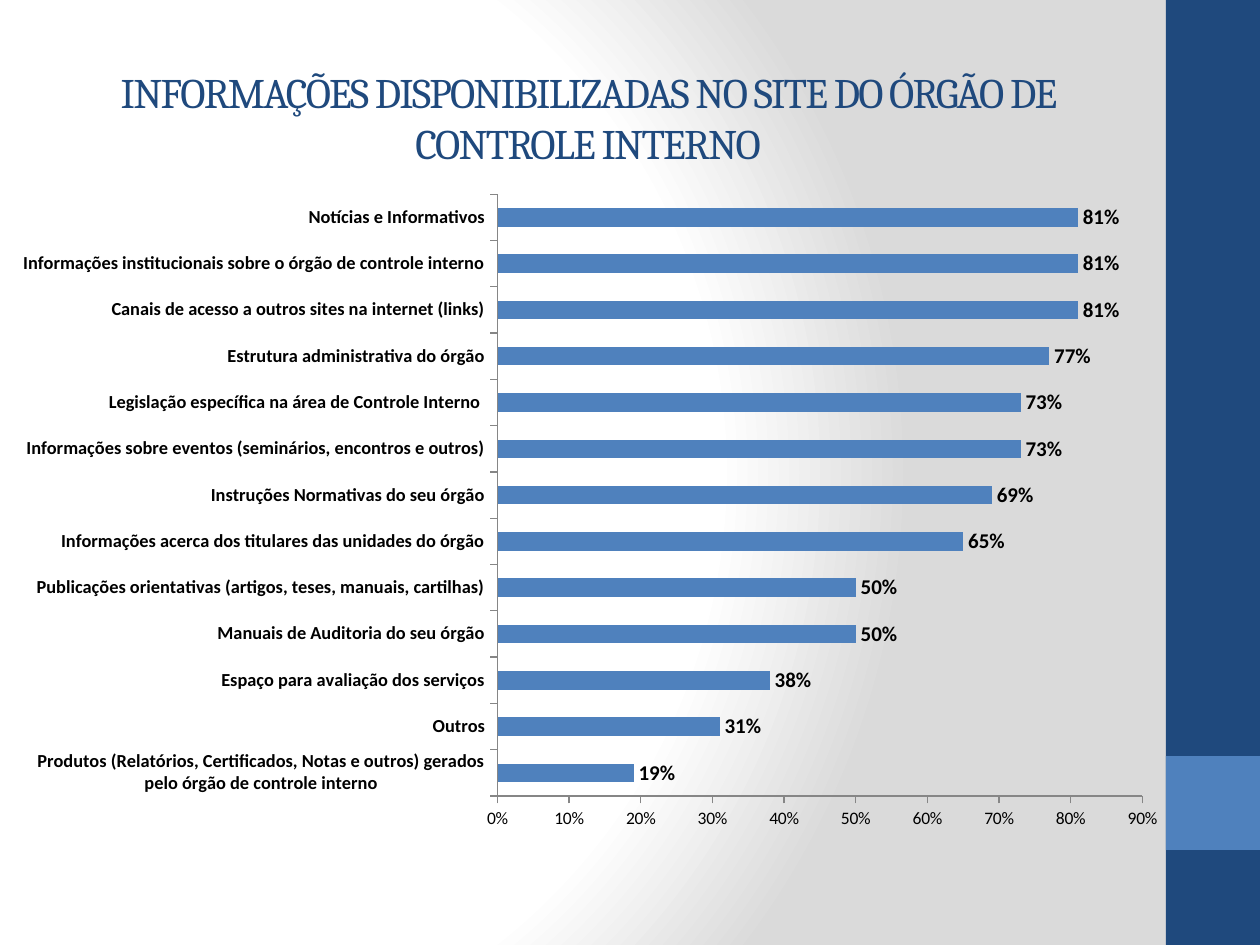
from lxml import etree
from pptx import Presentation
from pptx import util as u
from pptx.chart.data import CategoryChartData
from pptx.dml.color import RGBColor
from pptx.enum import chart as ch, shapes, text
from pptx.oxml import parse_xml
from pptx.oxml.ns import nsdecls, qn

PX = 914400 / 126
WIDTH, HEIGHT = 1260, 945
NAVY = RGBColor(0x1F, 0x49, 0x7D)
BLUE = RGBColor(0x4F, 0x81, 0xBD)
BLACK = RGBColor(0, 0, 0)
GREY = RGBColor(0x86, 0x86, 0x86)
WHITE = RGBColor(0xFF, 0xFF, 0xFF)
SILVER = RGBColor(0xDA, 0xDA, 0xDA)

TITLE = "INFORMAÇÕES DISPONIBILIZADAS NO SITE DO ÓRGÃO DE CONTROLE INTERNO"
# Listed from the bottom bar to the top one
SHARES = [
    ("Produtos (Relatórios, Certificados, Notas e outros) gerados pelo órgão de controle interno", 0.19),
    ("Outros", 0.31),
    ("Espaço para avaliação dos serviços", 0.38),
    ("Manuais de Auditoria do seu órgão", 0.5),
    ("Publicações orientativas (artigos, teses, manuais, cartilhas)", 0.5),
    ("Informações acerca dos titulares das unidades do órgão", 0.65),
    ("Instruções Normativas do seu órgão", 0.69),
    ("Informações sobre eventos (seminários, encontros e outros)", 0.73),
    ("Legislação específica na área de Controle Interno ", 0.73),
    ("Estrutura administrativa do órgão", 0.77),
    ("Canais de acesso a outros sites na internet (links)", 0.81),
    ("Informações institucionais sobre o órgão de controle interno", 0.81),
    ("Notícias e Informativos", 0.81),
]


def px(*lengths):
    return [u.Emu(round(length * PX)) for length in lengths]


class Deck:
    body_font = "Calibri"
    title_font = "Cambria"

    def __init__(self):
        self.prs = Presentation()
        self.prs.slide_width, self.prs.slide_height = px(WIDTH, HEIGHT)
        self.slide = self.prs.slides.add_slide(self.prs.slide_layouts[6])

    def background(self, stops, focus):
        """Radial gradient; focus holds the l, t, r, b insets in percent."""
        fill = self.slide.background.fill
        fill.solid()
        marks = "".join(
            f'<a:gs pos="{pos * 1000}"><a:srgbClr val="{color}"/></a:gs>' for pos, color in stops)
        insets = " ".join(f'{side}="{inset * 1000}"' for side, inset in zip("ltrb", focus))
        gradient = parse_xml(
            f'<a:gradFill {nsdecls("a")} rotWithShape="1"><a:gsLst>{marks}</a:gsLst>'
            f'<a:path path="circle"><a:fillToRect {insets}/></a:path></a:gradFill>')
        solid = self.slide.element.find(".//" + qn("p:bgPr")).find(qn("a:solidFill"))
        solid.getparent().replace(solid, gradient)

    def block(self, box, color):
        shape = self.slide.shapes.add_shape(shapes.MSO_SHAPE.RECTANGLE, *px(*box))
        shape.shadow.inherit = False
        shape.fill.solid()
        shape.fill.fore_color.rgb = color
        shape.line.fill.background()

    def title(self, box, words):
        frame = self.slide.shapes.add_textbox(*px(*box)).text_frame
        frame.word_wrap = True
        frame.vertical_anchor = text.MSO_ANCHOR.MIDDLE
        frame.text = words
        line = frame.paragraphs[0]
        line.alignment = text.PP_ALIGN.CENTER
        run = line.runs[0]
        self.style(run.font, 24, color=NAVY, name=self.title_font)
        run.font._element.set("spc", "-100")

    def style(self, font, size, bold=False, color=BLACK, name=body_font):
        font.size, font.bold, font.name = u.Pt(size), bold, name
        font.color.rgb = color

    def axis(self, axis, size, bold=False):
        axis.has_major_gridlines = False
        axis.major_tick_mark = ch.XL_TICK_MARK.OUTSIDE
        axis.minor_tick_mark = ch.XL_TICK_MARK.NONE
        axis.format.line.color.rgb = GREY
        self.style(axis.tick_labels.font, size, bold)

    def bar_chart(self, box, shares, plot_area):
        data = CategoryChartData(number_format="0%")
        data.categories = [label for label, _ in shares]
        data.add_series("Series 1", [share for _, share in shares])
        chart = self.slide.shapes.add_chart(
            ch.XL_CHART_TYPE.BAR_CLUSTERED, *px(*box), data).chart
        chart.has_legend = chart.has_title = False
        self.style(chart.font, 10)

        self.axis(chart.category_axis, 10.5, bold=True)
        percent = chart.value_axis
        self.axis(percent, 10)
        percent.minimum_scale, percent.maximum_scale, percent.major_unit = 0, 0.9, 0.1
        percent.tick_labels.number_format = "0%"
        percent.tick_labels.number_format_is_linked = False

        bars = chart.plots[0]
        bars.gap_width = 150
        bars.vary_by_categories = False
        bars.series[0].format.fill.solid()
        bars.series[0].format.fill.fore_color.rgb = BLUE
        bars.has_data_labels = True
        labels = bars.data_labels
        labels.show_value = True
        labels.number_format = "0%"
        labels.number_format_is_linked = False
        labels.position = ch.XL_LABEL_POSITION.OUTSIDE_END
        self.style(labels.font, 12, bold=True)
        self.place_plot(chart, plot_area)

    def place_plot(self, chart, fractions):
        """Fix the inner plot area as x, y, w, h fractions of the chart."""
        area = chart.element.find(".//" + qn("c:plotArea"))
        for old in area.findall(qn("c:layout")):
            area.remove(old)
        layout = etree.Element(qn("c:layout"))
        manual = etree.SubElement(layout, qn("c:manualLayout"))
        settings = [("layoutTarget", "inner"), ("xMode", "edge"), ("yMode", "edge"),
                    *zip("xywh", fractions)]
        for tag, value in settings:
            etree.SubElement(manual, qn(f"c:{tag}")).set("val", str(value))
        area.insert(0, layout)


def main():
    deck = Deck()
    deck.background([(0, WHITE), (75, WHITE), (100, SILVER)], (20, 50, 100, 50))
    band_left, band_width = 1166, 94
    deck.block((band_left, 0, band_width, HEIGHT), NAVY)
    deck.block((band_left, 756, band_width, band_width), BLUE)
    deck.title((63, 38, 1050, 158), TITLE)
    deck.bar_chart((15, 175, 1160, 665), SHARES, (0.416, 0.029, 0.556, 0.905))
    deck.prs.save("out.pptx")


if __name__ == "__main__":
    main()
